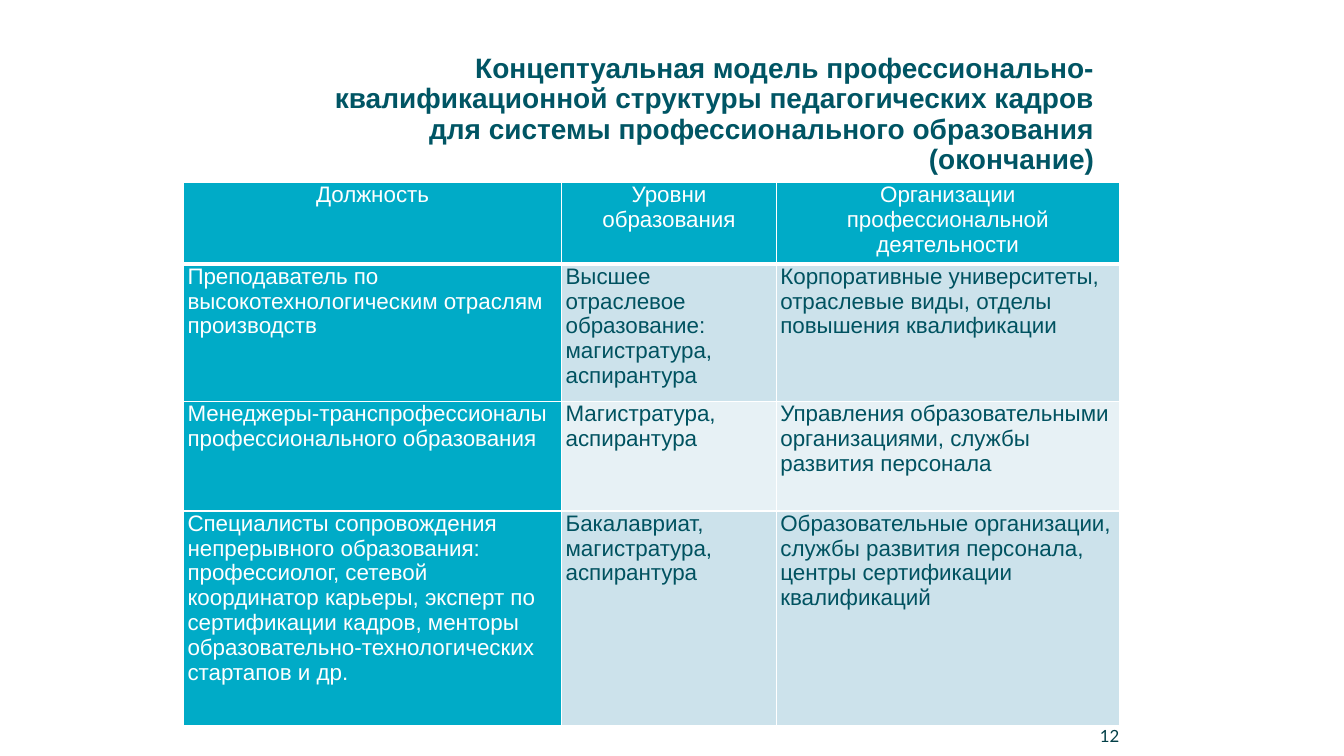
from lxml import etree
from pptx import Presentation
from pptx import util as u
from pptx.dml.color import RGBColor
from pptx.enum import text
from pptx.oxml.ns import qn

WHITE = RGBColor(0xFF, 0xFF, 0xFF)
TITLE = RGBColor(0x00, 0x55, 0x64)
BODY = RGBColor(0x00, 0x52, 0x60)
NUMBER = RGBColor(0x02, 0x3F, 0x47)
ACCENT = RGBColor(0x00, 0xAB, 0xC7)
BAND_DARK = RGBColor(0xCC, 0xE2, 0xEB)
BAND_LIGHT = RGBColor(0xE7, 0xF1, 0xF5)

COLUMNS = [3.75, 2.13, 3.4]
ROWS = [0.81, 1.36, 1.09, 2.13]
POSITIONS = [
    ["Должность", "Уровни образования",
     "Организации профессиональной деятельности"],
    ["Преподаватель по высокотехнологическим отраслям производств",
     "Высшее отраслевое образование: магистратура, аспирантура",
     "Корпоративные университеты, отраслевые виды, отделы повышения квалификации"],
    ["Менеджеры-транспрофессионалы профессионального образования",
     "Магистратура, аспирантура",
     "Управления образовательными организациями, службы развития персонала"],
    ["Специалисты сопровождения непрерывного образования: профессиолог, "
     "сетевой координатор карьеры, эксперт по сертификации кадров, менторы "
     "образовательно-технологических стартапов и др.",
     "Бакалавриат, магистратура, аспирантура",
     "Образовательные организации, службы развития персонала, "
     "центры сертификации квалификаций"],
]


def write(tf, content, size=16, color=BODY, font="Arial", bold=False,
          align=text.PP_ALIGN.LEFT, spacing=None):
    tf.word_wrap = True
    p = tf.paragraphs[0]
    p.alignment = align
    if spacing:
        p.line_spacing = spacing
    r = p.add_run()
    r.text = content
    r.font.size = u.Pt(size)
    r.font.name = font
    r.font.bold = bold
    r.font.color.rgb = color


class SlideBuilder:
    def __init__(self, prs):
        self.slide = prs.slides.add_slide(prs.slide_layouts[6])
        self.border = WHITE

    def text_box(self, x, y, w, h, content, anchor, **style):
        sp = self.slide.shapes.add_textbox(*map(u.Inches, (x, y, w, h)))
        sp.text_frame.vertical_anchor = anchor
        write(sp.text_frame, content, **style)

    def cell_borders(self, cell, bottom):
        tc_pr = cell._tc.get_or_add_tcPr()
        for side, width in (("L", 1), ("R", 1), ("T", 1), ("B", bottom)):
            ln = etree.SubElement(tc_pr, qn("a:ln" + side), w=str(u.Pt(width)))
            fill = etree.SubElement(ln, qn("a:solidFill"))
            etree.SubElement(fill, qn("a:srgbClr"), val=str(self.border))

    def table(self, x, y, columns, rows, data):
        frame = self.slide.shapes.add_table(
            len(rows), len(columns), u.Inches(x), u.Inches(y),
            u.Inches(sum(columns)), u.Inches(sum(rows)))
        table = frame.table
        for column, width in zip(table.columns, columns):
            column.width = u.Inches(width)
        for i, (row, height) in enumerate(zip(table.rows, rows)):
            row.height = u.Inches(height)
            for j, cell in enumerate(row.cells):
                header, accent = i == 0, i == 0 or j == 0
                cell.margin_left = cell.margin_right = u.Inches(0.04)
                cell.margin_top = cell.margin_bottom = 0
                self.cell_borders(cell, bottom=3 if header else 1)
                cell.fill.solid()
                band = BAND_DARK if i % 2 else BAND_LIGHT
                cell.fill.fore_color.rgb = ACCENT if accent else band
                write(cell.text_frame, data[i][j],
                      color=WHITE if accent else BODY,
                      align=text.PP_ALIGN.CENTER if header else text.PP_ALIGN.LEFT)


def main():
    prs = Presentation()
    prs.slide_width, prs.slide_height = u.Inches(13.33), u.Inches(7.5)
    s = SlideBuilder(prs)

    # Slide number
    s.text_box(10.34, 7.1, 0.86, 0.4, "12", text.MSO_ANCHOR.MIDDLE,
               size=12, color=NUMBER, font="Lato", align=text.PP_ALIGN.RIGHT)

    # Title
    s.text_box(3.22, 0.47, 7.73, 1.32,
               "Концептуальная модель профессионально-квалификационной структуры "
               "педагогических кадров для системы профессионального образования "
               "(окончание)", text.MSO_ANCHOR.BOTTOM, size=20, color=TITLE,
               bold=True, align=text.PP_ALIGN.RIGHT, spacing=0.9)

    # Staff positions
    s.table(1.82, 1.81, COLUMNS, ROWS, POSITIONS)

    prs.save("out.pptx")


if __name__ == "__main__":
    main()
